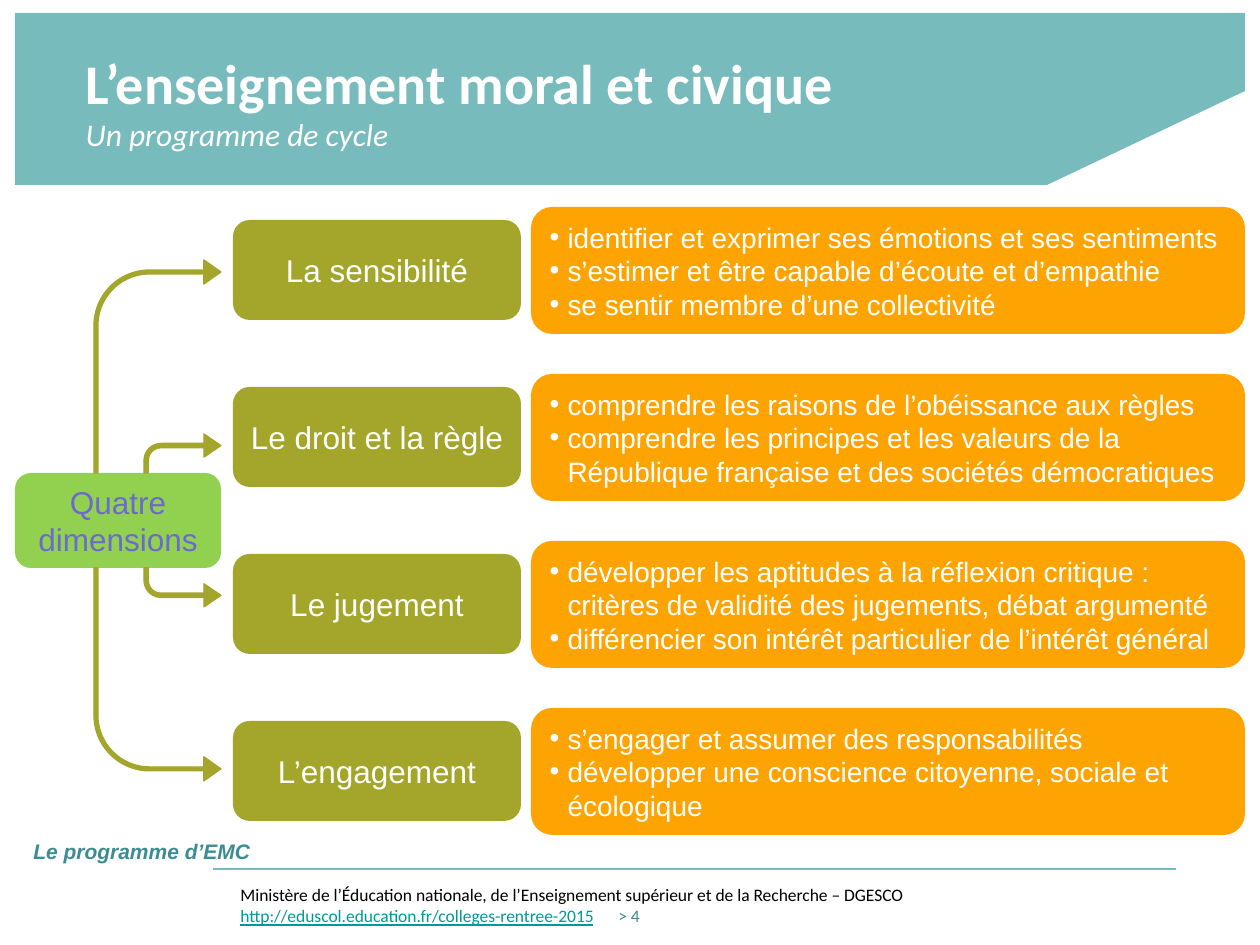
import pptx
import pptx.util
import pptx.dml.color
import pptx.enum.shapes
import pptx.enum.text
import pptx.oxml.ns
import lxml.etree

RGB = pptx.dml.color.RGBColor
SHAPE = pptx.enum.shapes.MSO_SHAPE
ALIGN = pptx.enum.text.PP_ALIGN
ANCHOR = pptx.enum.text.MSO_ANCHOR
FIT = pptx.enum.text.MSO_AUTO_SIZE

TEAL = RGB(0x78, 0xBB, 0xBC)
DARK = RGB(0x3C, 0x8C, 0x93)
LINK = RGB(0x00, 0x99, 0x99)
LIME = RGB(0x92, 0xD0, 0x50)
OLIVE = RGB(0xA3, 0xA6, 0x2A)
GOLD = RGB(0xFD, 0xA4, 0x03)
VIOLET = RGB(0x6B, 0x6B, 0xCF)
WHITE = RGB(0xFF, 0xFF, 0xFF)
BLACK = RGB(0x00, 0x00, 0x00)

SCALE = 914400 / 126
HEAD, BODY = "Calibri", "Arial"

ROWS = [
    ("La sensibilité", [
        "identifier et exprimer ses émotions et ses sentiments",
        "s’estimer et être capable d’écoute et d’empathie",
        "se sentir membre d’une collectivité"]),
    ("Le droit et la règle", [
        "comprendre les raisons de l’obéissance aux règles",
        "comprendre les principes et les valeurs de la République "
        "française et des sociétés démocratiques"]),
    ("Le jugement", [
        "développer les aptitudes à la réflexion critique : critères de "
        "validité des jugements, débat argumenté",
        "différencier son intérêt particulier de l’intérêt général"]),
    ("L’engagement", [
        "s’engager et assumer des responsabilités",
        "développer une conscience citoyenne, sociale et écologique"]),
]


def px(*nums):
    """Turn px into EMU."""
    return [pptx.util.Emu(round(n * SCALE)) for n in nums]


def sub(parent, tag, **attrs):
    """Add a drawing element in the a: namespace."""
    names = {key: str(val) for key, val in attrs.items()}
    return lxml.etree.SubElement(parent, pptx.oxml.ns.qn(tag), names)


class Board:
    """Holds the current slide and the style of its parts."""

    def __init__(self, deck):
        self.slide = deck.slides.add_slide(deck.slide_layouts[5])
        self.shapes = self.slide.shapes

    def style(self, run, size, color, face=BODY, bold=False, slant=False):
        font = run.font
        font.name, font.size = face, pptx.util.Pt(size)
        font.bold, font.italic = bold, slant
        font.color.rgb = color

    def paint(self, shape, color):
        shape.shadow.inherit = False
        shape.fill.solid()
        shape.fill.fore_color.rgb = color
        shape.line.fill.background()

    def banner(self, points):
        build = self.shapes.build_freeform(*points[0], scale=SCALE)
        build.add_line_segments(points[1:])
        self.paint(build.convert_to_shape(), TEAL)

    def title(self, main, minor, box):
        shape = self.shapes.title
        shape.left, shape.top, shape.width, shape.height = px(*box)
        self.shapes._spTree.append(shape._element)  # in front of the banner
        frame = shape.text_frame
        frame.auto_size = FIT.NONE
        frame.vertical_anchor = ANCHOR.MIDDLE
        para = frame.paragraphs[0]
        para.text = f"{main}\v{minor}"
        para.alignment = ALIGN.LEFT
        first, second = para.runs
        self.style(first, 32, WHITE, HEAD, bold=True)
        self.style(second, 18, WHITE, HEAD, slant=True)

    def card(self, box, fill):
        shape = self.shapes.add_shape(SHAPE.ROUNDED_RECTANGLE, *px(*box))
        self.paint(shape, fill)
        frame = shape.text_frame
        frame.word_wrap = True
        frame.vertical_anchor = ANCHOR.MIDDLE
        return frame

    def label(self, text, box, fill, color=WHITE):
        frame = self.card(box, fill)
        frame.text = text
        para = frame.paragraphs[0]
        para.alignment = ALIGN.CENTER
        self.style(para.runs[0], 18, color)

    def points(self, items, box):
        frame = self.card(box, GOLD)
        frame.text = "\n".join(items)
        hang = px(18)[0]
        for para in frame.paragraphs:
            para.alignment = ALIGN.LEFT
            props = para._p.get_or_add_pPr()
            props.set("marL", str(hang))
            props.set("indent", str(-hang))
            sub(props, "a:buFont", typeface=BODY)
            sub(props, "a:buChar", char="•")
            self.style(para.runs[0], 16, WHITE)

    def arrow(self, box, adjust, flip):
        shape = self.shapes.add_shape(SHAPE.BENT_ARROW, *px(*box))
        self.paint(shape, OLIVE)
        shape.line.color.rgb = OLIVE
        shape.line.width = pptx.util.Pt(0.75)
        for num, val in enumerate(adjust):
            shape.adjustments[num] = val
        if flip:
            shape._element.spPr.xfrm.set("flipV", "1")

    def rule(self, left, right, y):
        kind = pptx.enum.shapes.MSO_CONNECTOR.STRAIGHT
        line = self.shapes.add_connector(kind, *px(left, y, right, y))
        line.line.color.rgb = TEAL
        line.line.width = pptx.util.Pt(0.75)
        sub(line._element.spPr, "a:effectLst")

    def note(self, text, box):
        frame = self.shapes.add_textbox(*px(*box)).text_frame
        frame.word_wrap = False
        frame.text = text
        self.style(frame.paragraphs[0].runs[0], 12, DARK, bold=True, slant=True)

    def footer(self, owner, site, page, box):
        frame = self.shapes.add_textbox(*px(*box)).text_frame
        frame.word_wrap = True
        frame.text = f"{owner}\n{site}"
        top, low = frame.paragraphs
        self.style(top.runs[0], 10, BLACK, HEAD)
        tabs = sub(low._p.get_or_add_pPr(), "a:tabLst")
        sub(tabs, "a:tab", pos=px(378)[0], algn="l")
        self.style(low.runs[0], 10, LINK, HEAD)
        low.runs[0].font.underline = True
        run = low.add_run()
        run.text = f"\t{page}"
        self.style(run, 10, DARK, HEAD)


def main():
    deck = pptx.Presentation()
    deck.slide_width, deck.slide_height = px(1260, 945)
    board = Board(deck)

    board.banner([(1245, 13), (15, 13), (15, 185), (1047, 185), (1245, 91)])
    board.title("L’enseignement moral et civique", "Un programme de cycle",
                (73, 16, 1133, 169))
    board.rule(213, 1176, 869)
    board.footer("Ministère de l’Éducation nationale, de l’Enseignement "
                 "supérieur et de la Recherche – DGESCO",
                 "http://eduscol.education.fr/colleges-rentree-2015", "> 4",
                 (228, 878, 978, 67))

    hub, hub_h = 473, 95
    board.label("Quatre dimensions", (15, hub, 206, hub_h), LIME, VIOLET)
    for row, (name, items) in enumerate(ROWS):
        shift = row * 167
        board.label(name, (233, 220 + shift, 288, 100), OLIVE)
        board.points(items, (531, 207 + shift, 714, 127))

    outer = (94, 127, 213, (0.031, 0.095, 0.134, 0.438))
    inner = (144, 77, 39, (0.111, 0.297, 0.434, 0.438))
    for left, width, height, adjust in (outer, inner):
        for flip, top in ((False, hub - height), (True, hub + hub_h)):
            board.arrow((left, top, width, height), adjust, flip)

    board.note("Le programme d’EMC", (21, 832, 244, 38))
    deck.save("out.pptx")


if __name__ == "__main__":
    main()
